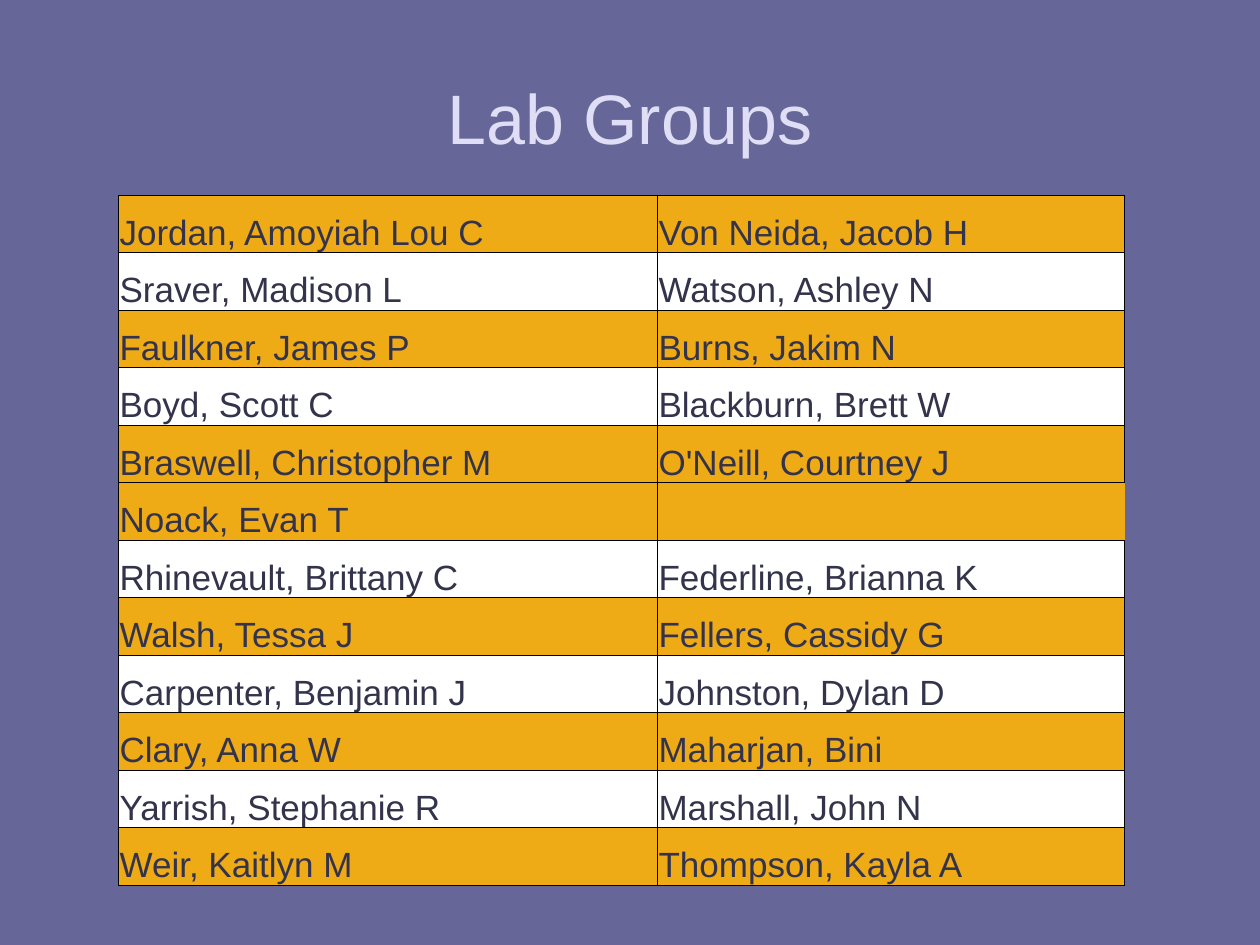
"""Build the Lab Groups slide with its two-column table of names."""
from lxml import etree
from pptx import Presentation
from pptx.dml.color import RGBColor
from pptx.enum import text
from pptx.oxml import ns
from pptx.util import Pt

THEME = {
    "background": RGBColor.from_string("666699"),
    "gold": RGBColor.from_string("EFAB16"),
    "white": RGBColor.from_string("FFFFFF"),
    "border": "000000",
    "title": {"name": "Arial", "size": Pt(40), "color": RGBColor.from_string("DFDEF6")},
    "body": {"name": "Arial", "size": Pt(20), "color": RGBColor.from_string("33334C")},
}
NO_STYLE = "{2D5ABB26-0587-4C30-8999-92F81FD0307C}"
GROUPS = [
    ("Jordan, Amoyiah Lou C", "Von Neida, Jacob H"),
    ("Sraver, Madison L", "Watson, Ashley N"),
    ("Faulkner, James P", "Burns, Jakim N"),
    ("Boyd, Scott C", "Blackburn, Brett W"),
    ("Braswell, Christopher M", "O'Neill, Courtney J"),
    ("Noack, Evan T", ""),
    ("Rhinevault, Brittany C", "Federline, Brianna K"),
    ("Walsh, Tessa J", "Fellers, Cassidy G"),
    ("Carpenter, Benjamin J", "Johnston, Dylan D"),
    ("Clary, Anna W", "Maharjan, Bini"),
    ("Yarrish, Stephanie R", "Marshall, John N"),
    ("Weir, Kaitlyn M", "Thompson, Kayla A"),
]
SECOND_BLOCK = 5


def add_span(para, words, style):
    span = para.add_run()
    span.text = words
    for key, value in style.items():
        if key == "color":
            span.font.color.rgb = value
        else:
            setattr(span.font, key, value)


def add_border(cell, side, visible):
    line = etree.SubElement(cell._tc.get_or_add_tcPr(), ns.qn(f"a:ln{side}"), w=str(Pt(0.5)))
    if visible:
        fill = etree.SubElement(line, ns.qn("a:solidFill"))
        etree.SubElement(fill, ns.qn("a:srgbClr"), val=THEME["border"])
    else:
        etree.SubElement(line, ns.qn("a:noFill"))


deck = Presentation()
deck.slide_width, deck.slide_height = Pt(720), Pt(540)
page = deck.slides.add_slide(deck.slide_layouts[6])
page.background.fill.solid()
page.background.fill.fore_color.rgb = THEME["background"]

box = page.shapes.add_textbox(Pt(36), Pt(21.6), Pt(648), Pt(90))
frame_format = {"word_wrap": True, "vertical_anchor": text.MSO_ANCHOR.MIDDLE}
for key, value in frame_format.items():
    setattr(box.text_frame, key, value)
title = box.text_frame.paragraphs[0]
title.alignment = text.PP_ALIGN.CENTER
add_span(title, "Lab Groups", THEME["title"])

frame = page.shapes.add_table(len(GROUPS), 2, Pt(67.6), Pt(111.6), Pt(575.2), Pt(394.56))
table = frame.table
table._tbl.tblPr.find(ns.qn("a:tableStyleId")).text = NO_STYLE
for column, width in zip(table.columns, (308, 267.2)):
    column.width = Pt(width)

cell_format = {
    "vertical_anchor": text.MSO_ANCHOR.BOTTOM,
    "margin_left": Pt(0.75),
    "margin_right": Pt(0.75),
    "margin_top": Pt(0.75),
    "margin_bottom": Pt(0),
}
for row, names in enumerate(GROUPS):
    table.rows[row].height = Pt(32.88)
    is_gold = row % 2 == (row >= SECOND_BLOCK)
    for column, name in enumerate(names):
        cell = table.cell(row, column)
        for key, value in cell_format.items():
            setattr(cell, key, value)
        for side in "LRTB":
            add_border(cell, side, bool(name) or side != "R")
        cell.fill.solid()
        cell.fill.fore_color.rgb = THEME["gold" if is_gold else "white"]
        if name:
            add_span(cell.text_frame.paragraphs[0], name, THEME["body"])

deck.save("out.pptx")
